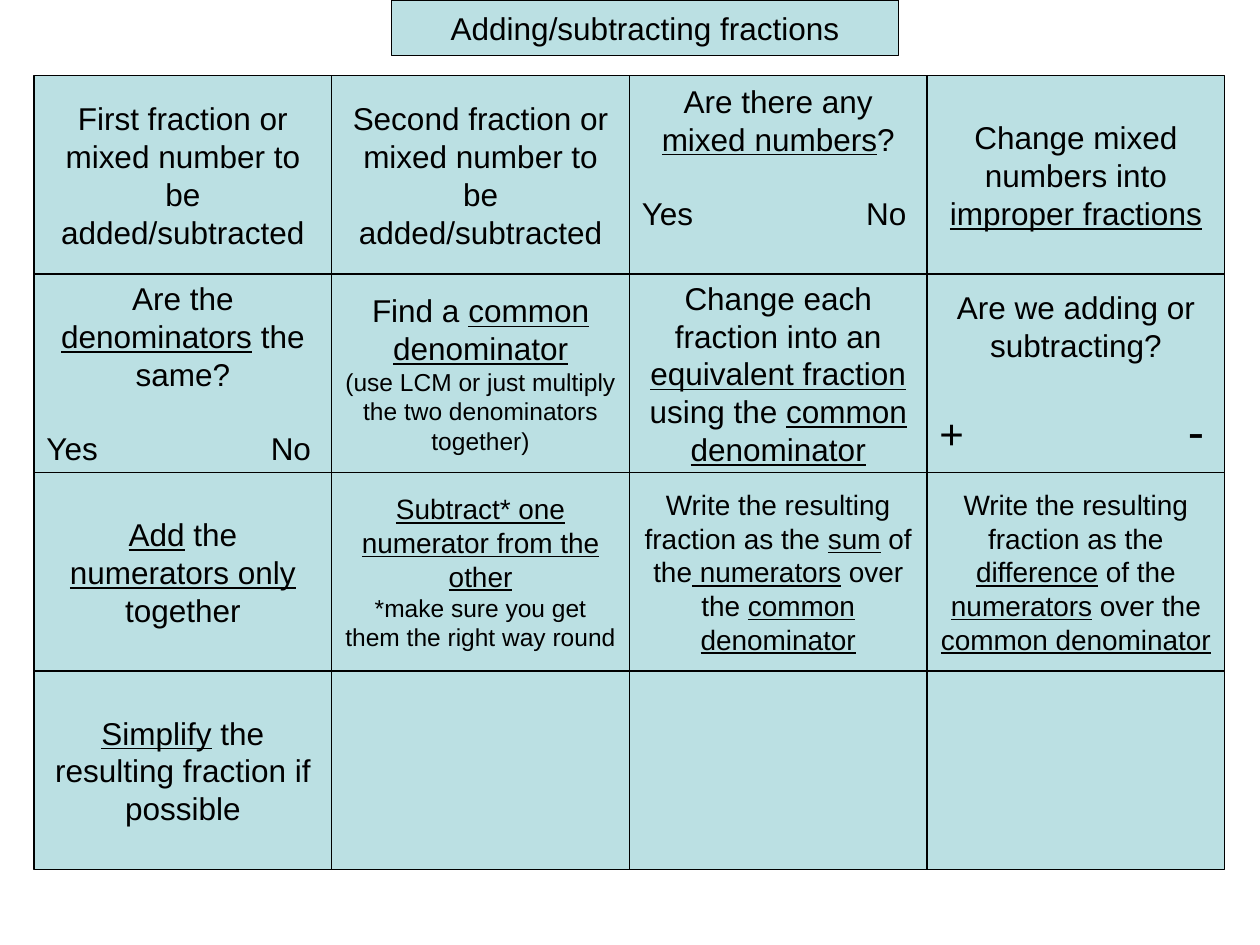
from dataclasses import dataclass

from lxml.etree import SubElement
from pptx import Presentation
from pptx.dml.color import RGBColor
from pptx.enum.shapes import MSO_SHAPE as Shape
from pptx.enum.text import MSO_ANCHOR as Anchor, MSO_AUTO_SIZE as AutoSize, PP_ALIGN as Align
from pptx.oxml.ns import qn
from pptx.util import Inches, Pt


@dataclass(frozen=True)
class Theme:
    """Colours, font and type sizes of the slide."""
    fill: RGBColor = RGBColor(0xBB, 0xE0, 0xE3)
    ink: RGBColor = RGBColor(0, 0, 0)
    font: str = "Arial"
    line: float = 0.75
    body: int = 18
    compact: int = 16
    note: int = 14
    plus: int = 24
    minus: int = 28
    gap: int = 21


@dataclass(frozen=True)
class Text:
    """A centred paragraph, with underscores around underlined words."""
    words: str
    size: int = Theme.body


@dataclass(frozen=True)
class Choice:
    """Two answers at opposite sides of a card."""
    left: str
    right: str
    left_size: int = Theme.body
    right_size: int = Theme.body


@dataclass(frozen=True)
class Card:
    """The paragraphs of one card and their vertical anchor."""
    paragraphs: tuple = ()
    anchor: Anchor = Anchor.MIDDLE


T = Theme()
COLUMNS = 4
CARDS = [
    Card((Text("First fraction or mixed number to be added/subtracted"),)),
    Card((Text("Second fraction or mixed number to be added/subtracted"),)),
    Card((Text("Are there any _mixed numbers_?"), Choice("Yes", "No")), Anchor.TOP),
    Card((Text("Change mixed numbers into _improper fractions_"),)),
    Card((Text("Are the _denominators_ the same?"), Choice("Yes", "No"))),
    Card((Text("Find a _common denominator_"),
          Text("(use LCM or just multiply the two denominators together)", T.note))),
    Card((Text("Change each fraction into an _equivalent fraction_ "
               "using the _common denominator_"),)),
    Card((Text("Are we adding or subtracting?"), Choice("+", "-", T.plus, T.minus))),
    Card((Text("_Add_ the _numerators only_ together"),)),
    Card((Text("_Subtract* one numerator from the other_", T.compact),
          Text("*make sure you get them the right way round", T.note))),
    Card((Text("Write the resulting fraction as the _sum_ of the_ numerators_ "
               "over the _common denominator_", T.compact),)),
    Card((Text("Write the resulting fraction as the _difference_ of the_ numerators_ "
               "over the _common denominator_", T.compact),)),
    Card((Text("_Simplify_ the resulting fraction if possible"),)),
    Card(), Card(), Card(),
]


def style_box(sp):
    """Give a box the common fill and outline."""
    sp.fill.solid()
    sp.fill.fore_color.rgb = T.fill
    sp.line.color.rgb = T.ink
    sp.line.width = Pt(T.line)


def add_run(p, words, size, underline=None):
    """Add a run in the theme font."""
    r = p.add_run()
    r.text = words
    r.font.name, r.font.size, r.font.underline = T.font, Pt(size), underline
    r.font.color.rgb = T.ink


def write_text(p, text):
    """Write a centred paragraph, underlining its marked words."""
    p.alignment = Align.CENTER
    for i, words in enumerate(text.words.split("_")):
        if words:
            add_run(p, words, text.size, True if i % 2 else None)


def write_choice(p, choice):
    """Write two answers, the second against a right tab stop."""
    p.alignment = Align.LEFT
    p.space_before = Pt(T.gap)
    tabs = SubElement(p._p.get_or_add_pPr(), qn("a:tabLst"))
    SubElement(tabs, qn("a:tab"), pos=str(Inches(2.1)), algn="r")
    add_run(p, choice.left, choice.left_size)
    add_run(p, "\t", T.body)
    add_run(p, choice.right, choice.right_size)


def add_title(s, words, left, top, width, height):
    """Place the title in its box."""
    sp = s.shapes.title
    sp.left, sp.top, sp.width, sp.height = left, top, width, height
    style_box(sp)
    tf = sp.text_frame
    tf.auto_size, tf.word_wrap = AutoSize.NONE, False
    tf.vertical_anchor = Anchor.MIDDLE
    write_text(tf.paragraphs[0], Text(words))


def add_card(s, card, left, top, width, height):
    """Place one card in its box."""
    sp = s.shapes.add_shape(Shape.RECTANGLE, left, top, width, height)
    sp.shadow.inherit = False
    style_box(sp)
    tf = sp.text_frame
    tf.word_wrap, tf.vertical_anchor = True, card.anchor
    for i, item in enumerate(card.paragraphs):
        p = tf.add_paragraph() if i else tf.paragraphs[0]
        write = write_choice if isinstance(item, Choice) else write_text
        write(p, item)


def add_card_grid(s, cards, left, top, width, height):
    """Divide the box into equal cards, row by row."""
    w, h = width // COLUMNS, height // (len(cards) // COLUMNS)
    for i, card in enumerate(cards):
        row, column = divmod(i, COLUMNS)
        add_card(s, card, left + column * w, top + row * h, w, h)


def main():
    """Build and save the slide."""
    prs = Presentation()
    prs.slide_width, prs.slide_height = Inches(10), Inches(7.5)
    s = prs.slides.add_slide(prs.slide_layouts[5])
    add_title(s, "Adding/subtracting fractions",
              Inches(3.11), Inches(0), Inches(4.02), Inches(0.44))
    add_card_grid(s, CARDS, Inches(0.27), Inches(0.6), Inches(9.45), Inches(6.3))
    prs.save("out.pptx")


if __name__ == "__main__":
    main()
